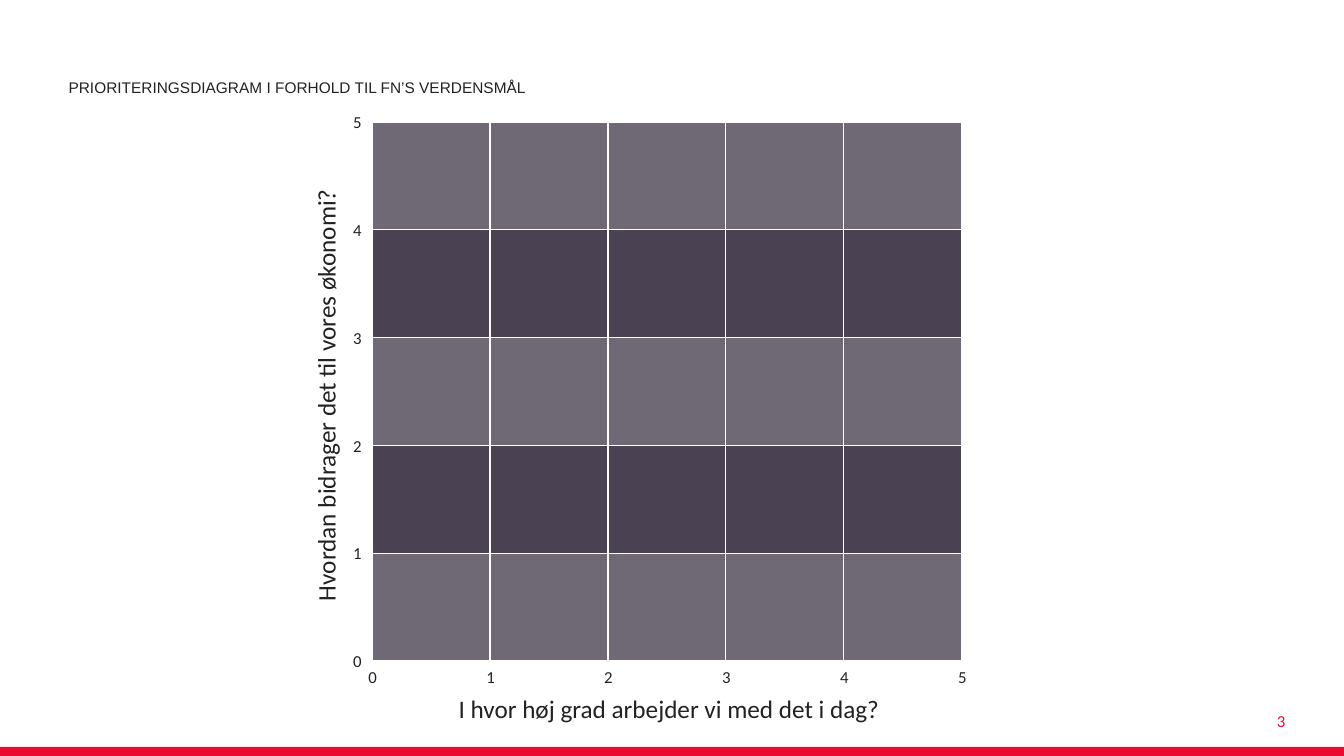
from lxml import etree
from pptx import Presentation
from pptx import util as u
from pptx.dml.color import RGBColor
from pptx.enum import shapes, text
from pptx.oxml import ns

PX = 9144  # EMU per px, 100 px to the inch
PAGE_W, PAGE_H = 1333, 750
STEPS = 5
CELL_W, CELL_H = 117, 107
TICK_W, TICK_H = 29, 30

RED = RGBColor(0xE9, 0x0C, 0x30)
INK = RGBColor(0x22, 0x22, 0x22)
LIGHT = RGBColor(0x6E, 0x69, 0x75)
DARK = RGBColor(0x4A, 0x41, 0x53)
WHITE = RGBColor(0xFF, 0xFF, 0xFF)


def px(*lengths):
    return [u.Emu(length * PX) for length in lengths]


def format_para(para, size, color, align, font="Calibri"):
    para.alignment = align
    para.font.name = font
    para.font.size = u.Pt(size)
    para.font.color.rgb = color


def add_label(page, box, words, size, wrap=False):
    label = page.shapes.add_textbox(*px(*box))
    frame = label.text_frame
    frame.word_wrap = wrap
    frame.text = words
    format_para(frame.paragraphs[0], size, INK, text.PP_ALIGN.CENTER)
    return label


def add_heading(page, box, words):
    heading = page.shapes.title
    heading.left, heading.top, heading.width, heading.height = px(*box)
    frame = heading.text_frame
    frame.auto_size = text.MSO_AUTO_SIZE.NONE
    frame.vertical_anchor = text.MSO_ANCHOR.BOTTOM
    frame.text = words
    para = frame.paragraphs[0]
    para.line_spacing = 0.9
    format_para(para, 11, INK, text.PP_ALIGN.LEFT, "Arial")


def add_borders(cell):
    props = cell._tc.get_or_add_tcPr()
    for side in ("lnL", "lnR", "lnT", "lnB"):
        line = etree.SubElement(props, ns.qn(f"a:{side}"), w=str(u.Pt(1)))
        fill = etree.SubElement(line, ns.qn("a:solidFill"))
        etree.SubElement(fill, ns.qn("a:srgbClr"), val=str(WHITE))


def add_grid(page, box):
    table = page.shapes.add_table(STEPS, STEPS, *px(*box)).table
    table.first_row = table.horz_banding = False
    for column in table.columns:
        column.width = u.Emu(CELL_W * PX)
    for index, row in enumerate(table.rows):
        row.height = u.Emu(CELL_H * PX)
        for cell in row.cells:
            add_borders(cell)
            cell.fill.solid()
            cell.fill.fore_color.rgb = DARK if index % 2 else LIGHT


def add_diagram(page, left, top):
    width, height = STEPS * CELL_W, STEPS * CELL_H
    bottom = top + height
    add_grid(page, (left, top, width, height))

    # Scale values along both axes
    for value in range(STEPS + 1):
        y = bottom - value * CELL_H - TICK_H // 2
        x = left + value * CELL_W - TICK_W // 2
        add_label(page, (left - TICK_W, y, TICK_W, TICK_H), str(value), 12)
        add_label(page, (x, bottom + 1, TICK_W, TICK_H), str(value), 12)

    # Axis questions
    add_label(page, (left + 73, bottom + 27, 443, 40),
              "I hvor høj grad arbejder vi med det i dag?", 18)
    question = add_label(page, (left - 264, top + 251, 436, 40),
                         "Hvordan bidrager det til vores økonomi?", 18, wrap=True)
    question.rotation = 270


def add_footer(page, bar_box, number_box):
    bar = page.shapes.add_shape(shapes.MSO_SHAPE.RECTANGLE, *px(*bar_box))
    bar.shadow.inherit = False
    bar.fill.solid()
    bar.fill.fore_color.rgb = RED
    bar.line.fill.background()

    frame = page.shapes.add_textbox(*px(*number_box)).text_frame
    frame.word_wrap = True
    frame.vertical_anchor = text.MSO_ANCHOR.MIDDLE
    frame.margin_right = 0
    frame.text = "3"
    format_para(frame.paragraphs[0], 12, RED, text.PP_ALIGN.RIGHT)


def main():
    deck = Presentation()
    deck.slide_width, deck.slide_height = px(PAGE_W, PAGE_H)
    page = deck.slides.add_slide(deck.slide_layouts.get_by_name("Title Only"))
    add_footer(page, (0, 741, PAGE_W, 9), (975, 695, 300, 40))
    add_diagram(page, 369, 121)
    add_heading(page, (58, 71, 760, 30),
                "PRIORITERINGSDIAGRAM I FORHOLD TIL FN’S VERDENSMÅL")
    deck.save("out.pptx")


if __name__ == "__main__":
    main()
